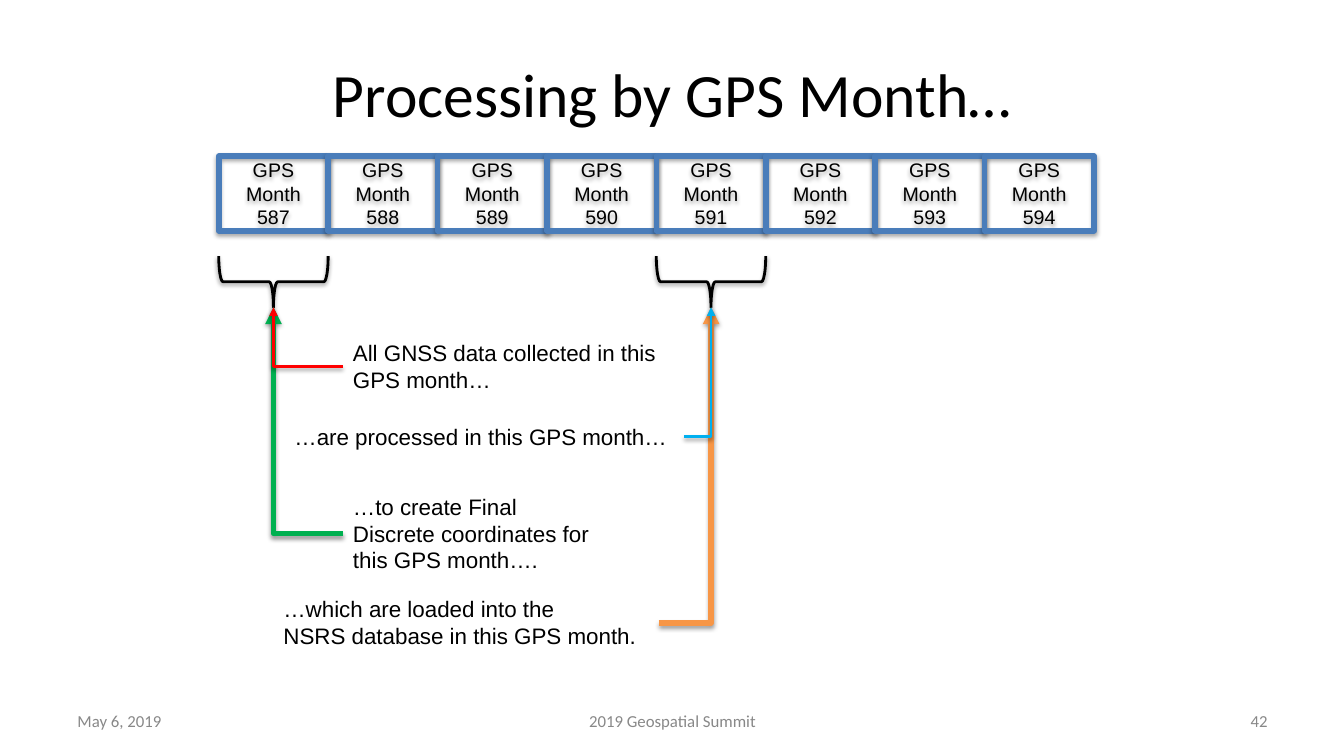
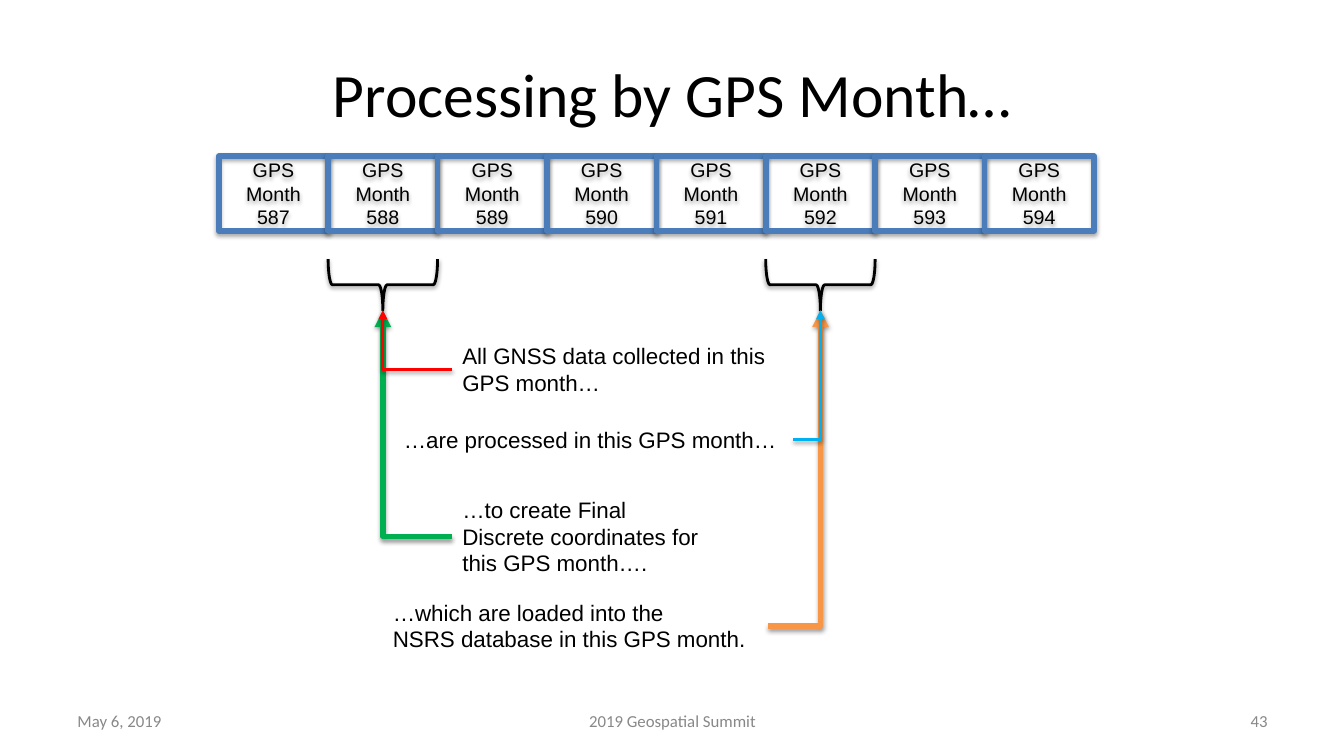
import pptx
import pptx.dml.color
import pptx.enum.shapes
import pptx.enum.text
import pptx.oxml.ns
import pptx.util
from lxml import etree

Inches, Pt = pptx.util.Inches, pptx.util.Pt
SHAPE = pptx.enum.shapes.MSO_SHAPE
ALIGN = pptx.enum.text.PP_ALIGN
MIDDLE = pptx.enum.text.MSO_ANCHOR.MIDDLE
qn = pptx.oxml.ns.qn

BLACK, GREY, BLUE = "000000", "888888", "4A7DBA"
ORANGE, CYAN, GREEN, RED = "F79646", "00B0F0", "00B050", "FF0000"

FIRST_MONTH, MONTH_COUNT = 587, 8
ROW_LEFT, ROW_TOP, ROW_WIDTH, ROW_HEIGHT = 2.17, 1.55, 8.68, 0.74
MONTH_WIDTH = ROW_WIDTH / MONTH_COUNT
BRACE_HEIGHT = 0.51
MONTHS_TO_PROCESS = 4

# Offsets from the data month's centre and the brace tips:
# left, top, width, height, lines, arrow colour, arrow width, points to processing month
STEPS = [
    (0, 2.81, 3.82, 0.64,
     ["…which are loaded into the", "NSRS database in this GPS month."], ORANGE, 4, True),
    (0.11, 1.1, 3.96, 0.37, ["…are processed in this GPS month…"], CYAN, 2, True),
    (0.69, 1.79, 2.62, 0.91,
     ["…to create Final Discrete coordinates for", "this GPS month…."], GREEN, 4, False),
    (0.69, 0.27, 3.3, 0.64,
     ["All GNSS data collected in this", "GPS month…"], RED, 2, False),
]


def rgb(color):
    return pptx.dml.color.RGBColor.from_string(color)


def write(tf, lines, size, font="Arial", color=BLACK, align=ALIGN.LEFT):
    tf.word_wrap = True
    for i, line in enumerate(lines):
        p = tf.paragraphs[0] if i == 0 else tf.add_paragraph()
        p.alignment = align
        r = p.add_run()
        r.text = line
        r.font.size, r.font.name = Pt(size), font
        r.font.color.rgb = rgb(color)


def outline(sp, color, width, dist=20000, alpha=38000):
    """Set the line, then a soft shadow straight below it."""
    sp.line.color.rgb = rgb(color)
    sp.line.width = Pt(width)
    effects = etree.SubElement(sp._element.spPr, qn("a:effectLst"))
    shadow = etree.SubElement(effects, qn("a:outerShdw"), blurRad="40000",
                              dist=str(dist), dir="5400000", rotWithShape="0")
    black = etree.SubElement(shadow, qn("a:srgbClr"), val=BLACK)
    etree.SubElement(black, qn("a:alpha"), val=str(alpha))


def add_text(slide, left, top, width, height, lines, size, **style):
    sp = slide.shapes.add_textbox(Inches(left), Inches(top), Inches(width), Inches(height))
    write(sp.text_frame, lines, size, **style)
    return sp


def add_title(slide, text):
    sp = slide.shapes.title
    sp.left, sp.top, sp.width, sp.height = (Inches(v) for v in (0.67, 0.3, 12, 1.25))
    sp.text_frame.vertical_anchor = MIDDLE
    write(sp.text_frame, [text], 44, font="Calibri", align=ALIGN.CENTER)


def add_footer(slide, number):
    for left, width, text, align in [
        (0.67, 3.11, "May 6, 2019", ALIGN.LEFT),
        (4.56, 4.22, "2019 Geospatial Summit", ALIGN.CENTER),
        (9.56, 3.11, str(number), ALIGN.RIGHT),
    ]:
        sp = add_text(slide, left, 6.95, width, 0.4, [text], 12,
                      font="Calibri", color=GREY, align=align)
        sp.text_frame.vertical_anchor = MIDDLE


def add_month_row(slide, left, top, width, height):
    step = width / MONTH_COUNT
    for i in range(MONTH_COUNT):
        sp = slide.shapes.add_shape(SHAPE.RECTANGLE, Inches(left + i * step), Inches(top),
                                    Inches(step), Inches(height))
        sp.fill.background()
        outline(sp, BLUE, 4, dist=23000, alpha=35000)
        sp.text_frame.vertical_anchor = MIDDLE
        write(sp.text_frame, [f"GPS Month {FIRST_MONTH + i}"], 14, align=ALIGN.CENTER)


def add_brace(slide, center, top):
    """Add a brace that opens upward, with its tip at the bottom."""
    middle = top + BRACE_HEIGHT / 2
    sp = slide.shapes.add_shape(
        SHAPE.LEFT_BRACE, Inches(center - BRACE_HEIGHT / 2), Inches(middle - MONTH_WIDTH / 2),
        Inches(BRACE_HEIGHT), Inches(MONTH_WIDTH))
    sp.rotation = 270
    sp.fill.background()
    outline(sp, BLACK, 2)
    return sp


def add_arrow(slide, box, side, brace, tip, color, width):
    """Link a side of the box to the brace tip with one right-angle bend."""
    conn = slide.shapes.add_connector(pptx.enum.shapes.MSO_CONNECTOR.ELBOW, 0, 0, 0, 0)
    conn._element.spPr.find(qn("a:prstGeom")).set("prst", "bentConnector2")
    conn.begin_connect(box, side)
    conn.end_connect(brace, 1)
    conn.end_x, conn.end_y = (Inches(v) for v in tip)
    outline(conn, color, width)
    etree.SubElement(conn.line._get_or_add_ln(), qn("a:tailEnd"), type="triangle")


def add_flow(slide, month, top):
    """Explain how the data of one month are processed some months later."""
    data_x = ROW_LEFT + (month - FIRST_MONTH + 0.5) * MONTH_WIDTH
    process_x = data_x + MONTHS_TO_PROCESS * MONTH_WIDTH
    tip_y = top + BRACE_HEIGHT
    data_brace = add_brace(slide, data_x, top)
    process_brace = add_brace(slide, process_x, top)
    for dx, dy, width, height, lines, color, weight, to_process in STEPS:
        box = add_text(slide, data_x + dx, tip_y + dy, width, height, lines, 16)
        side, brace, x = (3, process_brace, process_x) if to_process else (1, data_brace, data_x)
        add_arrow(slide, box, side, brace, (x, tip_y), color, weight)


def add_month_slide(prs, number, month, flow_top):
    slide = prs.slides.add_slide(prs.slide_layouts[5])
    add_title(slide, "Processing by GPS Month…")
    add_footer(slide, number)
    add_month_row(slide, ROW_LEFT, ROW_TOP, ROW_WIDTH, ROW_HEIGHT)
    add_flow(slide, month, flow_top)


def main():
    prs = pptx.Presentation()
    prs.slide_width, prs.slide_height = Inches(13.33), Inches(7.5)
    add_month_slide(prs, 42, 587, 2.54)
    add_month_slide(prs, 43, 588, 2.57)
    prs.save("out.pptx")


if __name__ == "__main__":
    main()
